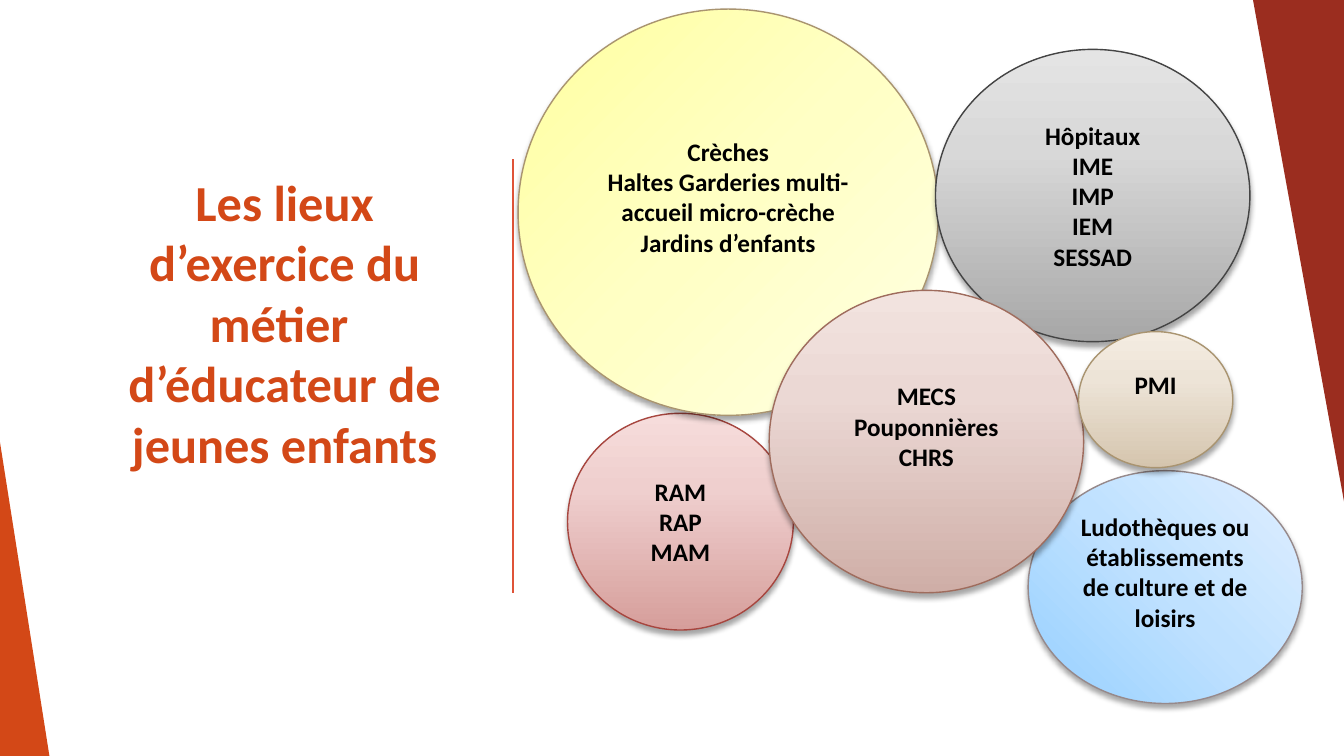
from copy import deepcopy

from lxml.etree import SubElement
from pptx import Presentation
from pptx.dml.color import RGBColor as RGB
from pptx.enum.shapes import MSO_CONNECTOR as Connector, MSO_SHAPE as Shape
from pptx.enum.text import MSO_ANCHOR as Anchor, PP_ALIGN as Align
from pptx.oxml.ns import qn
from pptx.util import Pt

ORANGE, BRICK, CORAL = RGB(211, 72, 23), RGB(155, 45, 31), RGB(223, 83, 56)
BLACK = RGB(0, 0, 0)
ROSE, ROSE_EDGE = (RGB(214, 158, 155), RGB(239, 207, 206), RGB(246, 220, 219)), RGB(167, 70, 63)
YELLOW = RGB(255, 255, 160), RGB(255, 255, 197), RGB(255, 255, 227)
GREY, GREY_EDGE = (RGB(167, 167, 167), RGB(216, 216, 216), RGB(228, 228, 228)), RGB(68, 68, 68)
BLUE, BLUE_EDGE = (RGB(150, 208, 255), RGB(191, 225, 255), RGB(224, 239, 255)), RGB(151, 137, 138)
CLAY, CLAY_EDGE = (RGB(207, 174, 167), RGB(235, 216, 212), RGB(242, 227, 223)), RGB(159, 108, 93)
SAND, SAND_EDGE = (RGB(213, 197, 174), RGB(237, 228, 215), RGB(244, 236, 225)), RGB(169, 148, 112)

TITLE = "Les lieux d’exercice du métier \vd’éducateur de jeunes enfants"
UPWARD = 90
# place (left, top, width, height), lines, gradient, angle, middle stop, edge, lift
PLACES = [
    ((405.4, 295.2, 161.3, 154.8), ["RAM", "RAP", "MAM"], ROSE, UPWARD, 0.65, ROSE_EDGE, 0),
    ((370.1, 6.5, 300.2, 290.2),
     ["Crèches", "Haltes Garderies multi-accueil micro-crèche Jardins d’enfants"],
     YELLOW, 315, 0.5, SAND_EDGE, 22),
    ((668.2, 35.3, 224.6, 208.8), ["Hôpitaux", "IME", "IMP", "IEM", "SESSAD"],
     GREY, UPWARD, 0.65, GREY_EDGE, 0),
    ((734.4, 336.2, 195.8, 166.3), ["Ludothèques ou établissements de culture et de loisirs"],
     BLUE, 45, 0.5, BLUE_EDGE, 22),
    ((549.4, 207.4, 224.6, 216), ["MECS Pouponnières CHRS"], CLAY, UPWARD, 0.65, CLAY_EDGE, 22),
    ((770.4, 236.9, 110.2, 97.2), ["PMI"], SAND, UPWARD, 0.65, SAND_EDGE, 22),
]


class SlideBuilder:
    font = "Calibri"

    def __init__(self, slide):
        self.shapes = slide.shapes

    def label(self, shape, lines, size, color, lift):
        """Fill a shape with centred bold lines, raised by half of lift."""
        frame = shape.text_frame
        settings = {"word_wrap": True, "vertical_anchor": Anchor.MIDDLE,
                    "margin_bottom": Pt(3.6 + lift)}
        for name, value in settings.items():
            setattr(frame, name, value)
        frame.text = "\n".join(lines)
        for paragraph in frame.paragraphs:
            paragraph.alignment = Align.CENTER
            for name, value in {"name": self.font, "size": Pt(size), "bold": True}.items():
                setattr(paragraph.font, name, value)
            paragraph.font.color.rgb = color

    def title(self, place, text):
        box = self.shapes.add_textbox(*map(Pt, place))
        self.label(box, [text], 36, ORANGE, 44)

    def wedge(self, place, color, rotation=0):
        wedge = self.shapes.add_shape(Shape.ISOSCELES_TRIANGLE, *map(Pt, place))
        wedge.adjustments[0] = 0
        wedge.rotation = rotation
        wedge.shadow.inherit = False
        wedge.fill.solid()
        wedge.fill.fore_color.rgb = color
        wedge.line.fill.background()

    def rule(self, x, top, bottom, color):
        rule = self.shapes.add_connector(Connector.STRAIGHT, Pt(x), Pt(top), Pt(x), Pt(bottom))
        rule.line.color.rgb = color
        rule.line.width = Pt(1)
        SubElement(rule.element.spPr, qn("a:effectLst"))

    def bubble(self, place, lines, colors, angle, middle, edge, lift):
        bubble = self.shapes.add_shape(Shape.FLOWCHART_CONNECTOR, *map(Pt, place))
        bubble.line.color.rgb = edge
        bubble.line.width = Pt(1)
        self.shade(bubble, colors, angle, middle)
        self.drop_shadow(bubble)
        self.label(bubble, lines, 18, BLACK, lift)

    def shade(self, shape, colors, angle, middle):
        shape.fill.gradient()
        shape.fill.gradient_angle = angle
        stop_list = shape.element.spPr.find(".//" + qn("a:gsLst"))
        stop_list.append(deepcopy(stop_list[-1]))
        for stop, color, position in zip(shape.fill.gradient_stops, colors, (0, middle, 1)):
            stop.color.rgb = color
            stop.position = position

    def drop_shadow(self, shape):
        shape.shadow.inherit = False
        effects = shape.element.spPr.find(qn("a:effectLst"))
        shadow = SubElement(effects, qn("a:outerShdw"), blurRad=str(Pt(4)), dist=str(Pt(3)),
                            dir="5400000", rotWithShape="0")
        tint = SubElement(shadow, qn("a:srgbClr"), val=str(BLACK))
        SubElement(tint, qn("a:alpha"), val="35000")


def main():
    deck = Presentation()
    deck.slide_width, deck.slide_height = Pt(960), Pt(540)
    builder = SlideBuilder(deck.slides.add_slide(deck.slide_layouts[6]))
    builder.title((73.4, 76.3, 259.9, 351.4), TITLE)
    builder.wedge((0, 316, 35.3, 224), ORANGE)
    builder.rule(366.5, 113.8, 423.4, CORAL)
    builder.wedge((895, 0, 66, 363.6), BRICK, rotation=180)
    for place in PLACES:
        builder.bubble(*place)
    deck.save("out.pptx")


if __name__ == "__main__":
    main()
